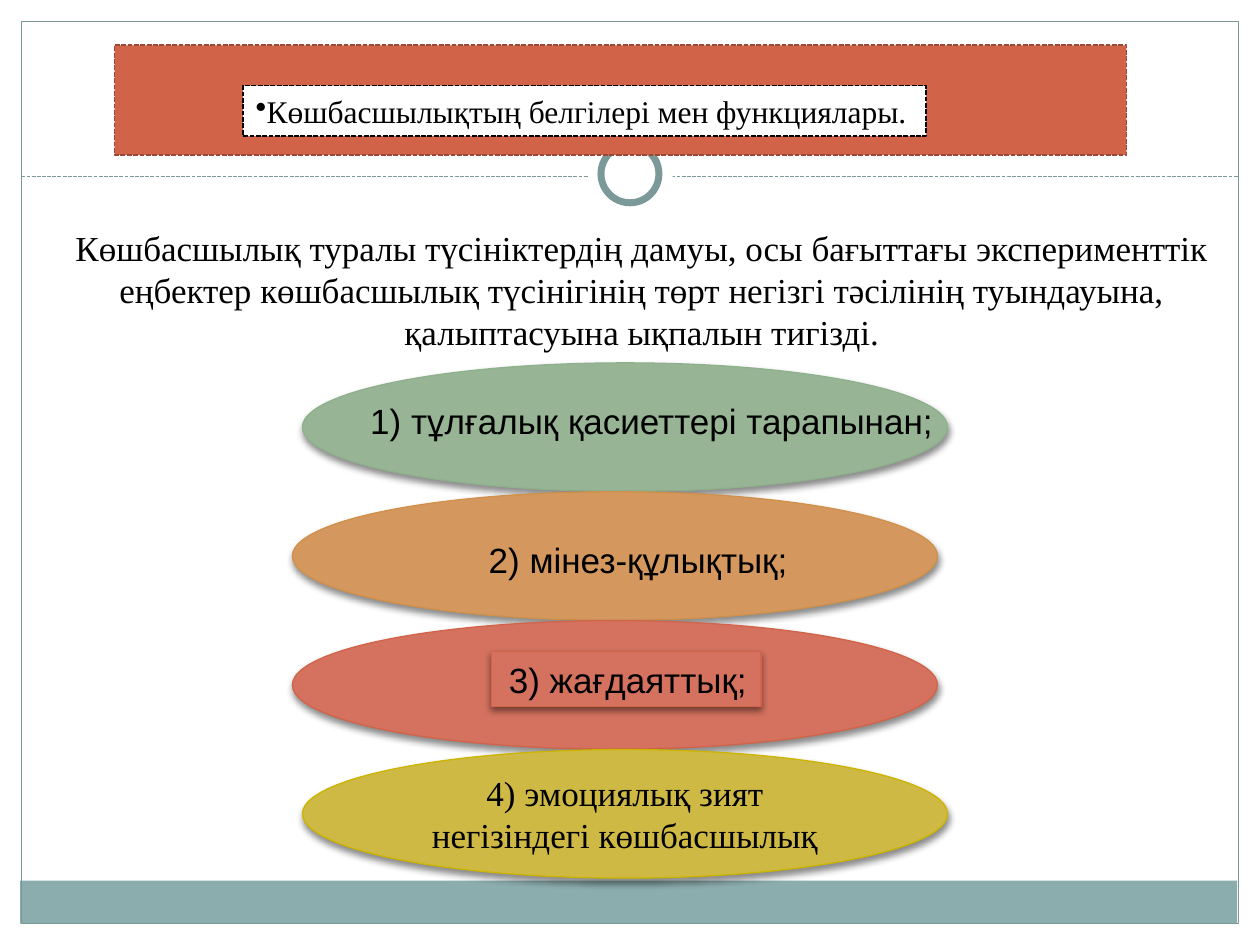
import pptx
import pptx.dml.color
import pptx.enum.dml
import pptx.enum.shapes
import pptx.enum.text
import pptx.oxml
import pptx.oxml.ns
import pptx.util
from pptx.util import Inches

SHAPES = pptx.enum.shapes.MSO_SHAPE
ALIGN = pptx.enum.text.PP_ALIGN
ANCHOR = pptx.enum.text.MSO_ANCHOR
DRAWING_NS = pptx.oxml.ns.nsdecls("a")


def rgb(hex_color):
    return pptx.dml.color.RGBColor.from_string(hex_color)


def style_line(line, color, width, dashed=False):
    line.color.rgb = rgb(color)
    line.width = pptx.util.Pt(width)
    if dashed:
        line.dash_style = pptx.enum.dml.MSO_LINE.SQUARE_DOT


def add_soft_shadow(shape):
    effects = shape._element.spPr.find(pptx.oxml.ns.qn("a:effectLst"))
    effects.append(pptx.oxml.parse_xml(
        f'<a:outerShdw {DRAWING_NS} blurRad="50800" dist="25400" dir="5400000" '
        'rotWithShape="0"><a:srgbClr val="000000"><a:alpha val="45000"/>'
        '</a:srgbClr></a:outerShdw>'))


def add_figure(slide, kind, box, fill=None, line=None, width=0.75,
               dashed=False, shadow=False):
    shape = slide.shapes.add_shape(kind, *map(Inches, box))
    shape.shadow.inherit = False
    if fill:
        shape.fill.solid()
        shape.fill.fore_color.rgb = rgb(fill)
    else:
        shape.fill.background()
    if line:
        style_line(shape.line, line, width, dashed)
    else:
        shape.line.fill.background()
    if shadow:
        add_soft_shadow(shape)
    return shape


def add_divider(slide, left, right, y):
    divider = slide.shapes.add_connector(
        pptx.enum.shapes.MSO_CONNECTOR.STRAIGHT,
        Inches(left), Inches(y), Inches(right), Inches(y))
    style_line(divider.line, "7C999A", 0.75, dashed=True)
    divider._element.spPr.append(
        pptx.oxml.parse_xml(f"<a:effectLst {DRAWING_NS}/>"))


def write(shape, text, font="Times New Roman", size=20, align=ALIGN.CENTER,
          anchor=ANCHOR.MIDDLE, wrap=True, indent=0, bullet=None):
    frame = shape.text_frame
    frame.word_wrap = wrap
    frame.vertical_anchor = anchor
    if not wrap:
        frame.auto_size = pptx.enum.text.MSO_AUTO_SIZE.SHAPE_TO_FIT_TEXT
    paragraph = frame.paragraphs[0]
    paragraph.text = text
    paragraph.alignment = align
    for run in paragraph.runs:
        run.font.name = font
        run.font.size = pptx.util.Pt(size)
        run.font.color.rgb = rgb("000000")
    properties = paragraph._p.get_or_add_pPr()
    if indent:
        properties.set("marL", "0")
        properties.set("indent", str(Inches(indent)))
    if bullet:
        properties.append(pptx.oxml.parse_xml(
            f'<a:buChar {DRAWING_NS} char="{bullet}"/>'))


def add_page_frame(slide):
    add_figure(slide, SHAPES.RECTANGLE, (0.16, 6.99, 9.66, 0.34), "8CADAE")
    add_figure(slide, SHAPES.RECTANGLE, (0.17, 0.17, 9.66, 7.16), line="7C999A")
    add_divider(slide, 0.17, 9.83, 1.4)
    add_figure(slide, SHAPES.OVAL, (4.67, 1.05, 0.67, 0.67), "FFFFFF")
    add_figure(slide, SHAPES.OVAL, (4.77, 1.15, 0.46, 0.46), "FFFFFF", "7C999A", 4)


def add_approaches(slide):
    ovals = []
    for row, (left, fill, line) in enumerate([
            (2.4, "97B595", "8FB08C"), (2.32, "D4985F", "D19049"),
            (2.32, "D4725F", "D16349"), (2.4, "CFB945", "CCB400")]):
        ovals.append(add_figure(
            slide, SHAPES.OVAL, (left, 2.88 + row * 1.023, 5.12, 1.02),
            fill, line, shadow=True))
    write(ovals[-1], "4) эмоциялық зият негізіндегі көшбасшылық")

    traits = slide.shapes.add_textbox(*map(Inches, (2.8, 3.12, 4.74, 0.44)))
    behaviour = slide.shapes.add_textbox(*map(Inches, (3.74, 4.22, 2.63, 0.44)))
    situation = add_figure(slide, SHAPES.RECTANGLE, (3.9, 5.17, 2.14, 0.44),
                           "D4725F", "D16349", shadow=True)
    for label, text in [(traits, "1) тұлғалық қасиеттері тарапынан;"),
                        (behaviour, "2) мінез-құлықтық;"),
                        (situation, "3) жағдаяттық;")]:
        write(label, text, font="Arial", align=ALIGN.JUSTIFY, wrap=False,
              indent=0.04)


def add_heading(slide):
    add_figure(slide, SHAPES.RECTANGLE, (0.91, 0.36, 8.03, 0.87),
               "D16349", "9B4936", 0.9, dashed=True)
    heading = add_figure(slide, SHAPES.RECTANGLE, (1.93, 0.68, 5.42, 0.4),
                         "FFFFFF", "000000", 0.9, dashed=True)
    write(heading, "Көшбасшылықтың белгiлерi мен функциялaры.", size=18,
          align=ALIGN.JUSTIFY, wrap=False, bullet="•")


def main():
    deck = pptx.Presentation()
    deck.slide_width, deck.slide_height = Inches(10), Inches(7.5)
    slide = deck.slides.add_slide(deck.slide_layouts[6])
    add_page_frame(slide)
    intro = slide.shapes.add_textbox(*map(Inches, (0.43, 2.02, 9.33, 0.83)))
    write(intro, "Көшбасшылық туралы түсініктердің дамуы, осы бағыттағы "
          "эксперименттік\vеңбектер көшбасшылық түсінігінің төрт негізгі "
          "тәсілінің туындауына, қалыптасуына ықпалын тигізді.",
          anchor=ANCHOR.BOTTOM)
    add_approaches(slide)
    add_heading(slide)
    deck.save("out.pptx")


if __name__ == "__main__":
    main()
